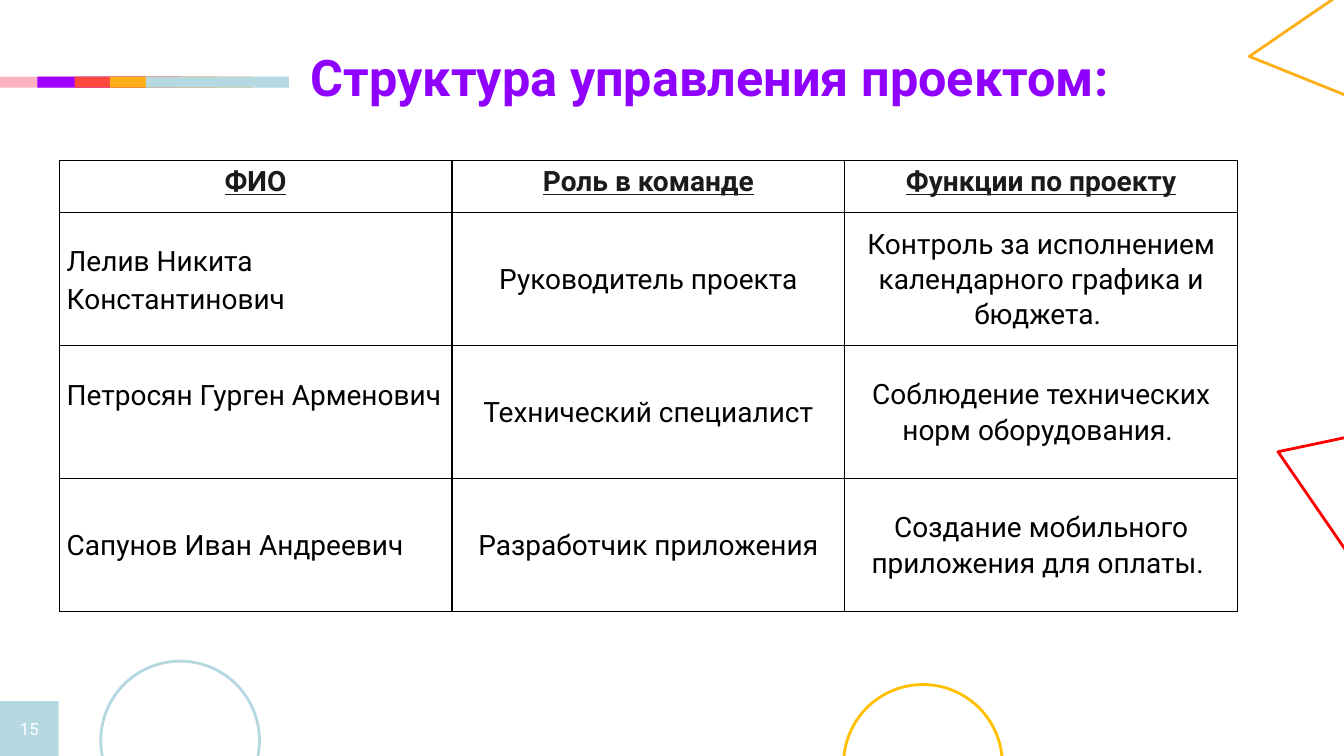
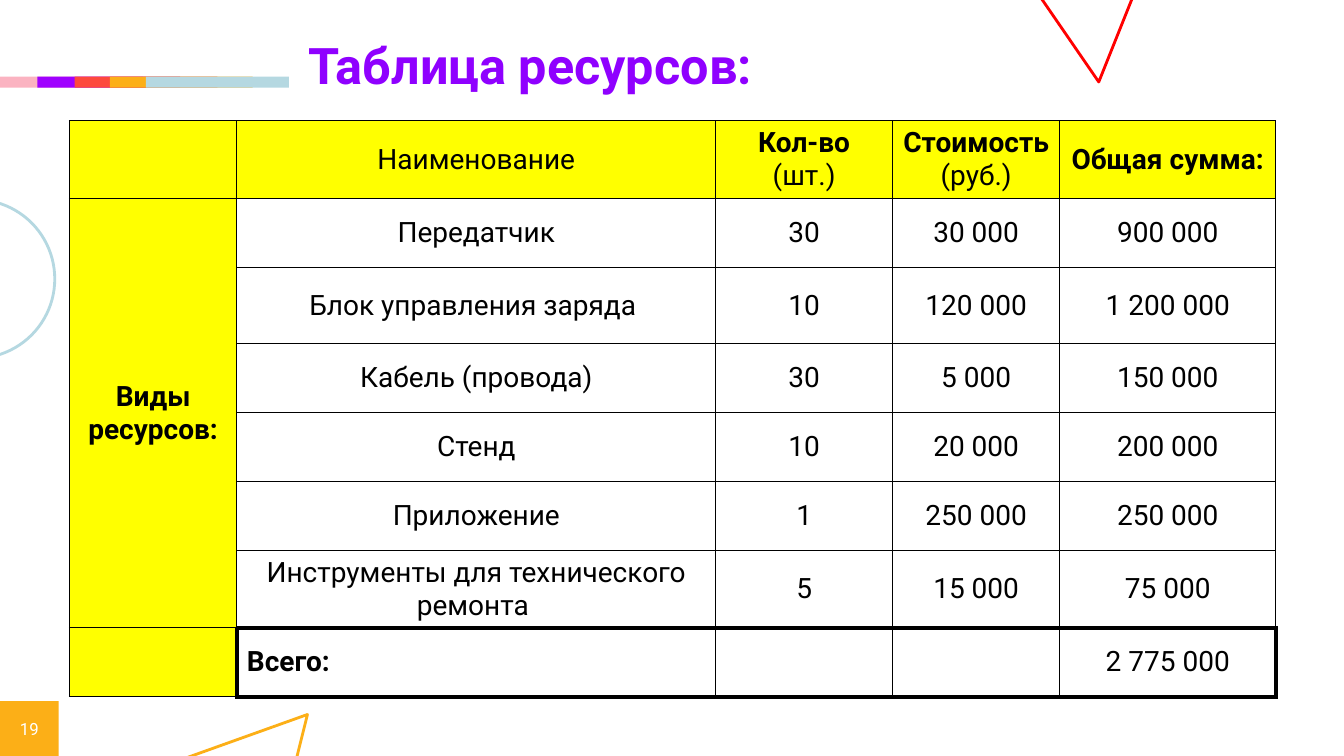
from lxml import etree
from pptx import Presentation
from pptx.dml.color import RGBColor
from pptx.enum.shapes import MSO_SHAPE as Preset
from pptx.enum.text import MSO_ANCHOR as Anchor, PP_ALIGN as Align
from pptx.oxml.ns import qn
from pptx.util import Cm, Pt

FONT = "Roboto"
WHITE = RGBColor(0xFF, 0xFF, 0xFF)
BLACK = RGBColor(0x00, 0x00, 0x00)
HEADING = RGBColor(0x1B, 0x1B, 0x1B)
TITLE = RGBColor(0x8F, 0x00, 0xFF)
PINK = RGBColor(0xFB, 0xB3, 0xC1)
VIOLET = RGBColor(0x9F, 0x00, 0xFF)
CORAL = RGBColor(0xFD, 0x49, 0x3D)
ORANGE = RGBColor(0xFC, 0xAF, 0x17)
SKY = RGBColor(0xB5, 0xD8, 0xE1)
GOLD = RGBColor(0xFF, 0xC0, 0x00)
RED = RGBColor(0xFF, 0x00, 0x00)
YELLOW = RGBColor(0xFF, 0xFF, 0x00)

STRIP = [(0, PINK), (0.94, VIOLET), (1.88, CORAL), (2.77, ORANGE), (3.68, SKY)]
TRIANGLE = Preset.ISOSCELES_TRIANGLE
CIRCLE = Preset.OVAL


def add_figure(slide, preset, left, top, width, height, fill, line=None, rotation=0):
    shape = slide.shapes.add_shape(preset, Cm(left), Cm(top), Cm(width), Cm(height))
    shape.shadow.inherit = False
    shape.rotation = rotation
    shape.fill.solid()
    shape.fill.fore_color.rgb = fill
    if line is None:
        shape.line.fill.background()
    else:
        shape.line.color.rgb = line
        shape.line.width = Pt(2)
    return shape


def style_cell(cell, runs, fill=None, color=BLACK, align=Align.CENTER, thick=""):
    """Write (text, bold) runs; the sides named in thick (L, R, T, B) get 3 pt borders."""
    properties = cell._tc.get_or_add_tcPr()
    for side in "LRTB":
        width = Pt(3 if side in thick else 1)
        border = etree.SubElement(properties, qn(f"a:ln{side}"), w=str(width))
        solid = etree.SubElement(border, qn("a:solidFill"))
        etree.SubElement(solid, qn("a:srgbClr"), val=str(BLACK))
    if fill is None:
        cell.fill.background()
    else:
        cell.fill.solid()
        cell.fill.fore_color.rgb = fill
    cell.vertical_anchor = Anchor.MIDDLE
    paragraph = cell.text_frame.paragraphs[0]
    paragraph.alignment = align
    for text, bold in runs:
        run = paragraph.add_run()
        run.text = text
        run.font.name, run.font.size, run.font.bold = FONT, Pt(20), bold
        run.font.color.rgb = color
    return paragraph


presentation = Presentation()
presentation.slide_width, presentation.slide_height = Cm(33.87), Cm(19.05)

# Shared frame: title, colour strip, page number, outlined figures, empty table
pages = [
    dict(
        title="Структура управления проектом:", title_box=(7.7, 1.02, 21.49, 1.8),
        number="15", number_fill=SKY,
        figures=[
            (TRIANGLE, 31.98, 0.03, ORANGE, 145.6),
            (CIRCLE, 21.26, 17.25, GOLD, 0),
            (TRIANGLE, 31.6, 10.44, RED, 291.8),
            (CIRCLE, 2.54, 16.66, SKY, 0),
        ],
        table_at=(1.49, 4.04), columns=[9.9] * 3, rows=[1.31] + [3.35] * 3,
    ),
    dict(
        title="Таблица ресурсов:", title_box=(7.65, 0.74, 18.11, 1.78),
        number="19", number_fill=ORANGE,
        figures=[
            (TRIANGLE, 4.37, 18.59, ORANGE, 160.3),
            (TRIANGLE, 25.04, -1.85, RED, 291.8),
            (CIRCLE, -2.62, 5.03, SKY, 0),
        ],
        table_at=(1.75, 3.04), columns=[4.22, 12.07, 4.45, 4.22, 5.44],
        rows=[1.97, 1.74, 1.9, 1.74, 1.74, 1.74, 1.94, 1.74],
    ),
]
tables = []
for page in pages:
    slide = presentation.slides.add_slide(presentation.slide_layouts[6])
    for left, color in STRIP:
        add_figure(slide, Preset.RECTANGLE, left, 1.93, 3.6, 0.28, color)

    title = slide.shapes.add_textbox(*map(Cm, page["title_box"]))
    number = add_figure(slide, Preset.RECTANGLE, 0, 17.67, 1.48, 1.38, page["number_fill"])
    for shape, text, size, color, align in [
        (title, page["title"], 36, TITLE, Align.LEFT),
        (number, page["number"], 12, WHITE, Align.CENTER),
    ]:
        frame = shape.text_frame
        frame.word_wrap = True
        frame.vertical_anchor = Anchor.MIDDLE
        frame.margin_left = frame.margin_right = Cm(0.13)
        frame.margin_top = frame.margin_bottom = Cm(0.13)
        paragraph = frame.paragraphs[0]
        paragraph.text = text
        paragraph.alignment = align
        paragraph.font.name, paragraph.font.size = FONT, Pt(size)
        paragraph.font.bold = shape is title
        paragraph.font.color.rgb = color

    for preset, left, top, line, rotation in page["figures"]:
        height = 4 if preset == CIRCLE else 3
        add_figure(slide, preset, left, top, 4, height, WHITE, line, rotation)

    columns, rows = page["columns"], page["rows"]
    left, top = page["table_at"]
    table = slide.shapes.add_table(
        len(rows), len(columns), Cm(left), Cm(top), Cm(sum(columns)), Cm(sum(rows))
    ).table
    table.first_row = table.horz_banding = False
    for column, width in zip(table.columns, columns):
        column.width = Cm(width)
    for row, height in zip(table.rows, rows):
        row.height = Cm(height)
    tables.append(table)

team_table, resource_table = tables

# Project team
team = [
    ("ФИО", "Роль в команде", "Функции по проекту"),
    ("Лелив Никита Константинович", "Руководитель проекта",
     "Контроль за исполнением календарного графика и бюджета. "),
    ("Петросян Гурген Арменович", "Технический специалист",
     "Соблюдение технических норм оборудования. "),
    ("Сапунов Иван Андреевич", "Разработчик приложения",
     "Создание мобильного приложения для оплаты. "),
]
for row, texts in enumerate(team):
    for column, text in enumerate(texts):
        cell = team_table.cell(row, column)
        if row == 0:
            paragraph = style_cell(cell, [(text, True)], color=HEADING)
            paragraph.runs[0].font.underline = True
            cell.vertical_anchor = Anchor.TOP
            continue
        align = Align.LEFT if column == 0 else Align.CENTER
        paragraph = style_cell(cell, [(text, False)], align=align)
        paragraph.line_spacing = 1.15 if column == 0 and row < 3 else 1.07
        if column < 2:
            cell.margin_left = cell.margin_right = Cm(0.19)
            cell.margin_top = cell.margin_bottom = 0
team_table.cell(2, 0).margin_bottom = Cm(0.9)

# Resources: heading row, goods, total row in a thick frame
heading = [
    [],
    [("Наименование", False)],
    [("Кол-во ", True), ("(шт.)", False)],
    [("Стоимость ", True), ("(руб.)", False)],
    [("Общая сумма:", True)],
]
goods = [
    ("Передатчик", "30", "30 000", "900 000"),
    ("Блок управления заряда ", "10", "120 000", "1 200 000"),
    ("Кабель (провода)", "30", "5 000", "150 000"),
    ("Стенд", "10", "20 000", "200 000"),
    ("Приложение", "1", "250 000", "250 000"),
    ("Инструменты для технического ремонта ", "5", "15 000", "75 000"),
]
total = [[], [("Всего:", True)], [], [], [("2 775 000", False)]]
resources = [heading]
resources += [[[]] + [[(text, False)] for text in good] for good in goods]
resources.append(total)
resources[1][0] = [("Виды ресурсов:", True)]

last_row, last_column = len(resources) - 1, len(heading) - 1
for row, cells in enumerate(resources):
    for column, runs in enumerate(cells):
        thick = ""
        if row == last_row:
            thick = {0: "R", 1: "LTB", last_column: "RTB"}.get(column, "TB")
        elif row == last_row - 1 and column > 0:
            thick = "B"
        fill = YELLOW if row == 0 or column == 0 else None
        align = Align.LEFT if (row, column) == (last_row, 1) else Align.CENTER
        style_cell(resource_table.cell(row, column), runs, fill, align=align, thick=thick)
resource_table.cell(1, 0).merge(resource_table.cell(last_row - 1, 0))

presentation.save("out.pptx")
